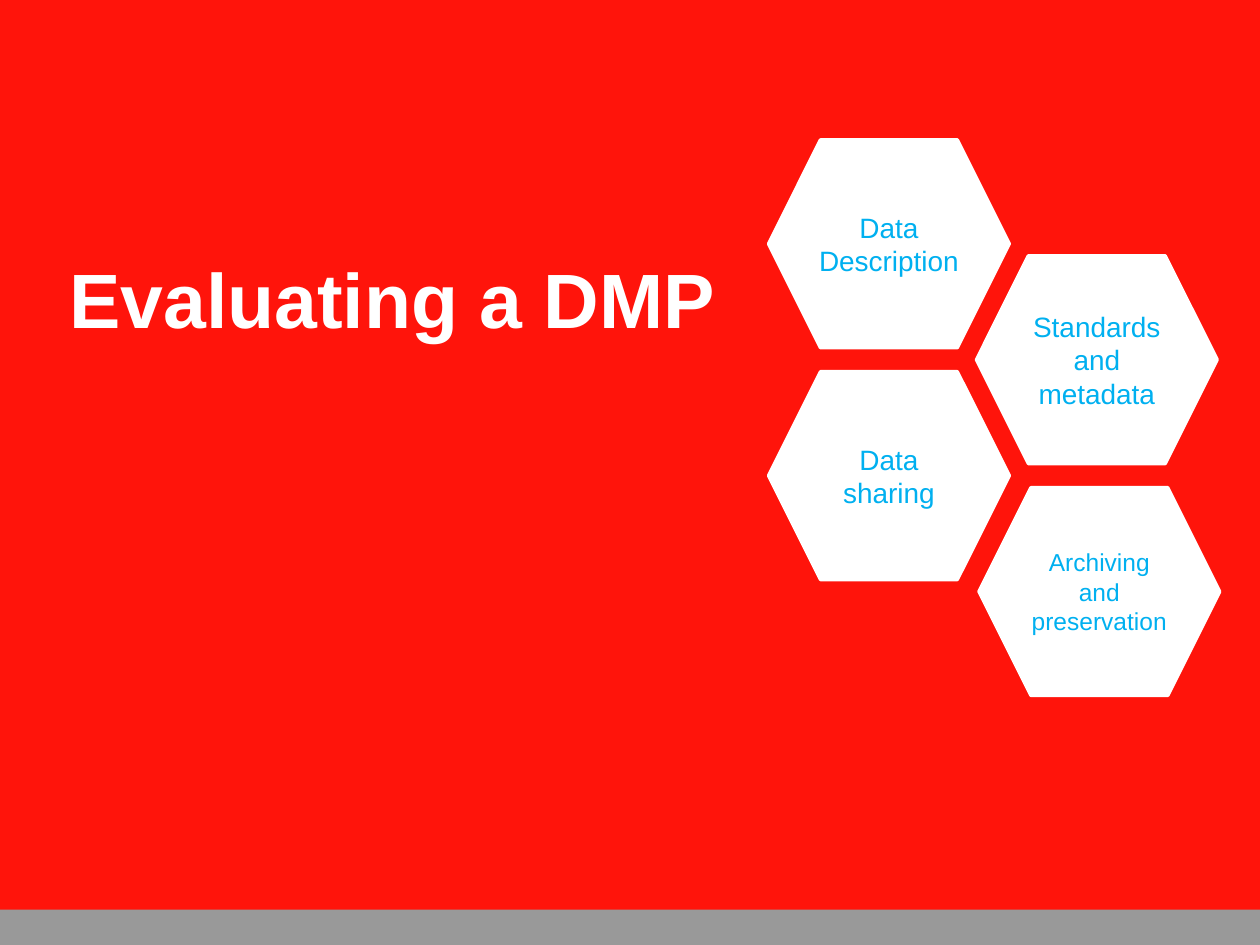
"""Build the section slide on evaluating a data management plan."""
from dataclasses import dataclass

from lxml.etree import SubElement
from pptx import Presentation
from pptx.dml.color import RGBColor
from pptx.enum.shapes import MSO_SHAPE as Preset
from pptx.enum.text import MSO_ANCHOR as Anchor, PP_ALIGN as Align
from pptx.oxml.ns import qn
from pptx.util import Inches, Pt


@dataclass(frozen=True)
class Theme:
    font: str = "Arial"
    white: RGBColor = RGBColor(0xFF, 0xFF, 0xFF)
    red: RGBColor = RGBColor(0xFF, 0x14, 0x0B)
    grey: RGBColor = RGBColor(0x80, 0x80, 0x80)
    cyan: RGBColor = RGBColor(0x00, 0xB0, 0xF0)
    heading_size: int = 44
    topic_size: int = 16
    long_topic_size: int = 14


theme = Theme()


def add_filled(preset, left, top, width, height, color):
    shape = slide.shapes.add_shape(
        preset, Inches(left), Inches(top), Inches(width), Inches(height))
    shape.shadow.inherit = False
    shape.fill.solid()
    shape.fill.fore_color.rgb = color
    shape.line.fill.background()
    return shape


def style_text(paragraph, size, color, align, bold=False):
    paragraph.alignment = align
    paragraph.font.name = theme.font
    paragraph.font.size = Pt(size)
    paragraph.font.color.rgb = color
    paragraph.font.bold = bold


deck = Presentation()
deck.slide_width, deck.slide_height = Inches(10), Inches(7.5)
slide = deck.slides.add_slide(deck.slide_layouts[5])

footer_band = add_filled(Preset.RECTANGLE, 0, 0, 10, 7.5, theme.grey)
footer_color = footer_band.fill._xPr.find(qn("a:solidFill"))[0]
SubElement(footer_color, qn("a:alpha"), val="80000")
add_filled(Preset.RECTANGLE, 0, 0, 10, 7.22, theme.red)

heading = slide.shapes.title
slide.shapes._spTree.append(heading._element)
heading.left, heading.top = Inches(0.55), Inches(1.94)
heading.width, heading.height = Inches(6.66), Inches(2.65)
heading_text = heading.text_frame
heading_text.text = "Evaluating a DMP"
heading_text.word_wrap = True
heading_text.vertical_anchor = Anchor.TOP
heading_text.margin_left = heading_text.margin_right = 0
heading_text.margin_top = Inches(0.06)
heading_text.margin_bottom = Inches(0.05)
style_text(heading_text.paragraphs[0], theme.heading_size, theme.white, Align.LEFT, bold=True)

first_top, row_step = 1.11, 0.92
topics = [
    ("Data Description", 6.1, theme.topic_size),
    ("Standards and metadata", 7.75, theme.topic_size),
    ("Data sharing", 6.1, theme.topic_size),
    ("Archiving and preservation", 7.77, theme.long_topic_size),
]
for row, (label, left, size) in enumerate(topics):
    topic = add_filled(Preset.HEXAGON, left, first_top + row * row_step, 1.91, 1.65, theme.white)
    topic.line.color.rgb = theme.white
    topic.line.width = Pt(2)
    topic.text_frame.text = label
    topic.text_frame.word_wrap = True
    topic.text_frame.vertical_anchor = Anchor.MIDDLE
    style_text(topic.text_frame.paragraphs[0], size, theme.cyan, Align.CENTER)

deck.save("out.pptx")
